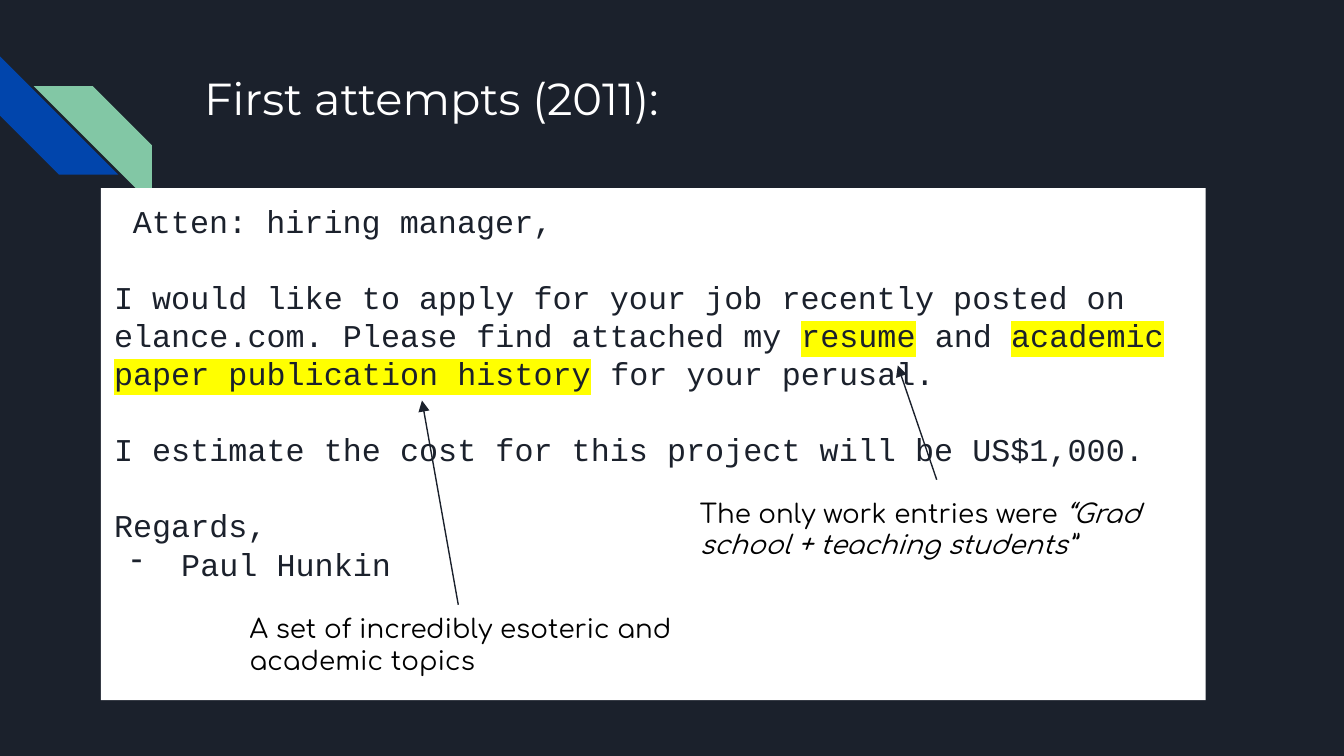
from dataclasses import dataclass

from lxml import etree
from pptx import Presentation
from pptx.dml.color import RGBColor
from pptx.enum.shapes import MSO_CONNECTOR, MSO_SHAPE
from pptx.enum.text import MSO_ANCHOR, PP_ALIGN
from pptx.oxml.ns import qn
from pptx.util import Inches, Pt


@dataclass(frozen=True)
class Theme:
    navy: str = "1B212C"
    blue: str = "0145AC"
    green: str = "82C7A5"
    white: str = "FFFFFF"
    black: str = "000000"
    marker: str = "FFFF00"
    title_font: str = "Montserrat"
    letter_font: str = "Courier New"
    note_font: str = "Comfortaa"
    title_size: float = 24
    letter_size: float = 17
    note_size: float = 14
    letter_gap: float = 20.4


@dataclass(frozen=True)
class Span:
    text: str
    marked: bool = False
    italic: bool = False


@dataclass(frozen=True)
class LetterPara:
    spans: tuple[Span, ...]
    gap_before: bool = True
    margin: float = 0
    indent: float = 0
    bullet: str = ""


@dataclass(frozen=True)
class Stripe:
    left: float
    top: float
    color: str
    rotation: float = 0
    flipped: bool = False


@dataclass(frozen=True)
class Note:
    left: float
    top: float
    spans: tuple[Span, ...]
    arrow_from: tuple[float, float]
    arrow_to: tuple[float, float]


THEME = Theme()

STRIPES = (
    Stripe(0, 0.42, THEME.blue, rotation=270),
    Stripe(0.25, 0.64, THEME.green, flipped=True),
)

LETTER = (
    LetterPara((Span("Atten: hiring manager,"),), gap_before=False, indent=0.14),
    LetterPara((
        Span("I would like to apply for your job recently posted on "
             "elance.com. Please find attached my "),
        Span("resume", marked=True),
        Span(" and "),
        Span("academic paper publication history", marked=True),
        Span(" for your perusal."),
    )),
    LetterPara((Span("I estimate the cost for this project will be US$1,000."),)),
    LetterPara((Span("Regards,"),)),
    LetterPara((Span("Paul Hunkin"),), gap_before=False,
               margin=0.5, indent=-0.37, bullet="-"),
)

NOTES = (
    Note(5.11, 3.6,
         (Span("The only work entries were "),
          Span("“Grad school + teaching students”", italic=True)),
         (6.97, 3.57), (6.68, 2.72)),
    Note(1.76, 4.46,
         (Span("A set of incredibly esoteric and academic topics"),),
         (3.41, 4.5), (3.14, 2.98)),
)


def add_color(parent, tag: str, color: str) -> None:
    holder = etree.SubElement(parent, qn(tag))
    etree.SubElement(holder, qn("a:srgbClr"), val=color)


def set_font(para, name: str, size: float, color: str) -> None:
    para.font.name = name
    para.font.size = Pt(size)
    para.font.color.rgb = RGBColor.from_string(color)


def add_spans(para, spans: tuple[Span, ...]) -> None:
    for span in spans:
        run = para.add_run()
        run.text = span.text
        if span.italic:
            run.font.italic = True
        if span.marked:
            add_color(run._r.get_or_add_rPr(), "a:highlight", THEME.marker)


def set_frame(box):
    frame = box.text_frame
    frame.word_wrap = True
    frame.vertical_anchor = MSO_ANCHOR.TOP
    frame.margin_left = frame.margin_right = Inches(0.1)
    frame.margin_top = frame.margin_bottom = Inches(0.1)
    return frame


def add_filled(page, kind, left: float, top: float, width: float,
               height: float, color: str):
    shape = page.shapes.add_shape(
        kind, Inches(left), Inches(top), Inches(width), Inches(height))
    shape.shadow.inherit = False
    shape.fill.solid()
    shape.fill.fore_color.rgb = RGBColor.from_string(color)
    shape.line.fill.background()
    return shape


def add_stripe(page, stripe: Stripe) -> None:
    shape = add_filled(page, MSO_SHAPE.DIAGONAL_STRIPE, stripe.left, stripe.top,
                       0.88, 0.88, stripe.color)
    shape.adjustments[0] = 0.5
    shape.rotation = stripe.rotation
    if stripe.flipped:
        shape._element.spPr.xfrm.set("flipH", "1")


def add_letter(page) -> None:
    sheet = add_filled(page, MSO_SHAPE.RECTANGLE, 0.75, 1.4, 8.22, 3.81, THEME.white)
    frame = set_frame(sheet)
    for index, item in enumerate(LETTER):
        para = frame.add_paragraph() if index else frame.paragraphs[0]
        para.alignment = PP_ALIGN.LEFT
        if item.gap_before:
            para.space_before = Pt(THEME.letter_gap)
        props = para._p.get_or_add_pPr()
        props.set("marL", str(Inches(item.margin)))
        props.set("indent", str(Inches(item.indent)))
        if item.bullet:
            add_color(props, "a:buClr", THEME.navy)
            etree.SubElement(props, qn("a:buChar"), char=item.bullet)
        set_font(para, THEME.letter_font, THEME.letter_size, THEME.navy)
        add_spans(para, item.spans)


def add_arrow(page, note: Note) -> None:
    start, end = note.arrow_from, note.arrow_to
    arrow = page.shapes.add_connector(
        MSO_CONNECTOR.STRAIGHT, *map(Inches, start), *map(Inches, end))
    arrow.line.color.rgb = RGBColor.from_string(THEME.navy)
    arrow.line.width = Pt(0.75)
    etree.SubElement(arrow.line._get_or_add_ln(), qn("a:tailEnd"), type="triangle")
    etree.SubElement(arrow._element.spPr, qn("a:effectLst"))


def add_text(page, left: float, top: float, width: float, height: float,
             spans: tuple[Span, ...], font: str, size: float, color: str) -> None:
    box = page.shapes.add_textbox(
        Inches(left), Inches(top), Inches(width), Inches(height))
    para = set_frame(box).paragraphs[0]
    set_font(para, font, size, color)
    add_spans(para, spans)


def main() -> None:
    # A 16:9 page
    deck = Presentation()
    deck.slide_width = Inches(10)
    deck.slide_height = Inches(10) * 9 // 16
    page = deck.slides.add_slide(deck.slide_layouts[6])
    page.background.fill.solid()
    page.background.fill.fore_color.rgb = RGBColor.from_string(THEME.navy)

    # Corner stripes, then the letter over them
    for stripe in STRIPES:
        add_stripe(page, stripe)
    add_letter(page)

    # Notes pointing at the marked words
    for note in NOTES:
        add_arrow(page, note)
    for note in NOTES:
        add_text(page, note.left, note.top, 4.07, 0.67, note.spans,
                 THEME.note_font, THEME.note_size, THEME.black)

    # Title
    add_text(page, 1.42, 0.43, 7.7, 1, (Span("First attempts (2011):"),),
             THEME.title_font, THEME.title_size, THEME.white)

    deck.save("out.pptx")


if __name__ == "__main__":
    main()
